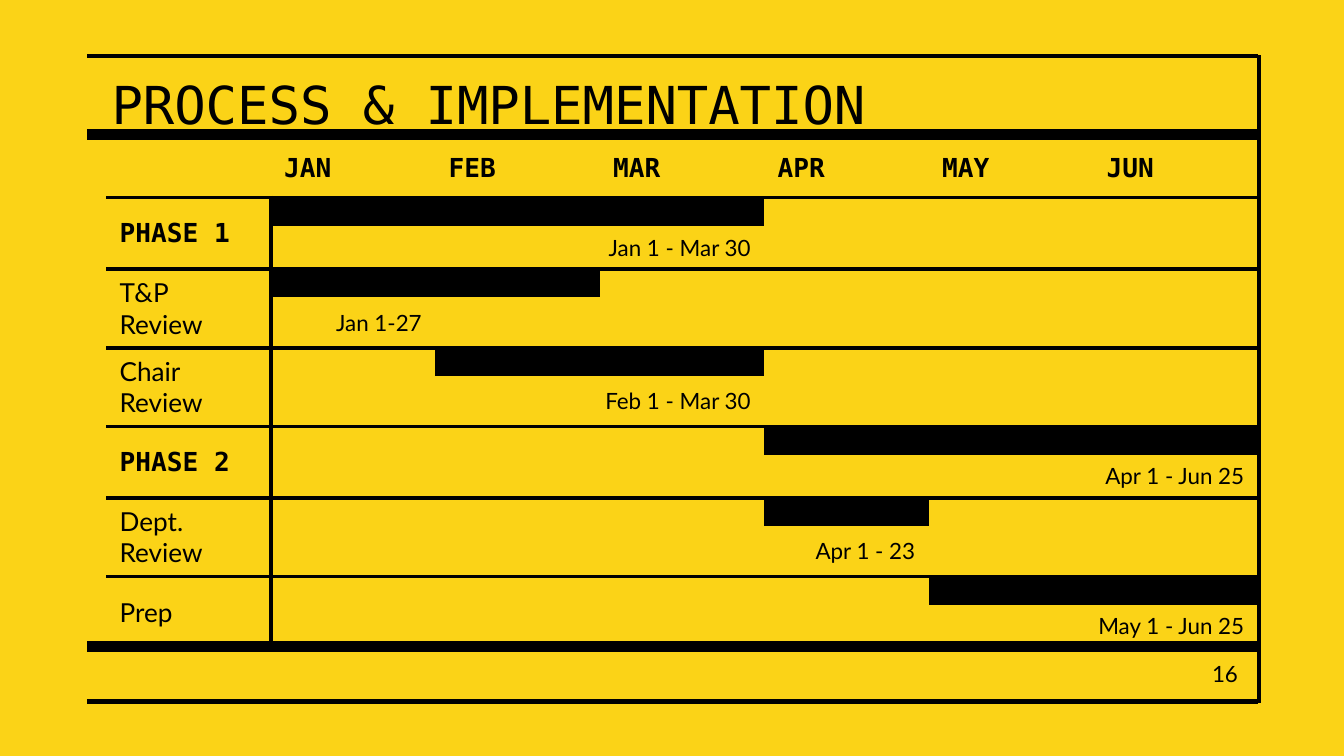
"""Build the process and implementation timeline slide."""
import pptx
from lxml import etree
from pptx import util as u
from pptx.dml import color as c
from pptx.enum import shapes, text
from pptx.oxml import ns

Pt = u.Pt
BLACK = c.RGBColor(0x00, 0x00, 0x00)
YELLOW = c.RGBColor(0xFB, 0xD3, 0x17)
MONO, SANS = "DejaVu Sans Mono", "Lato"
LEFT, RIGHT = text.PP_ALIGN.LEFT, text.PP_ALIGN.RIGHT
HEAD = {"name": MONO, "size": Pt(14), "bold": True}
TASK = {"name": SANS, "size": Pt(14), "bold": False}
DATE = {"name": SANS, "size": Pt(12), "bold": False}

MONTHS = ["JAN", "FEB", "MAR", "APR", "MAY", "JUN"]
PHASES = [
    ("PHASE 1", HEAD, (1, 3), "Jan 1 - Mar 30", (2, 3), 23.1),
    ("T&P Review", TASK, (1, 2), "Jan 1-27", (1, 1), 27.1),
    ("Chair Review", TASK, (2, 3), "Feb 1 - Mar 30", (2, 3), 27.1),
    ("PHASE 2", HEAD, (4, 6), "Apr 1 - Jun 25", (4, 6), 23.1),
    ("Dept. Review", TASK, (4, 4), "Apr 1 - 23", (4, 4), 27.1),
    ("Prep", TASK, (5, 6), "May 1 - Jun 25", (5, 6), 23.1),
]
RULES = [
    (674.6, 29.5, 674.6, 376.6, 2.25),
    (46.8, 375.8, 674, 375.8, 2.25),
    (46.8, 30.2, 674, 30.2, 2.25),
    (46.8, 72, 674.6, 72, 6),
    (46.8, 346.3, 674, 346.3, 6),
]


def assign(thing, values):
    for key, value in values.items():
        setattr(thing, key, value)


class Slide:
    def __init__(self, deck):
        self.ink = BLACK
        self.rule = 2.25
        self.page = deck.slides.add_slide(deck.slide_layouts[6])
        self.page.background.fill.solid()
        self.page.background.fill.fore_color.rgb = YELLOW

    def line(self, x1, y1, x2, y2, width):
        line = self.page.shapes.add_connector(
            shapes.MSO_CONNECTOR.STRAIGHT, Pt(x1), Pt(y1), Pt(x2), Pt(y2))
        line.line.color.rgb = self.ink
        line.line.width = Pt(width)
        etree.SubElement(line._element.spPr, ns.qn("a:effectLst"))

    def words(self, frame, words, font, align=LEFT):
        para = frame.paragraphs[0]
        para.alignment = align
        run = para.add_run()
        run.text = words
        assign(run.font, font)
        run.font.color.rgb = self.ink

    def label(self, box, words, font, align=LEFT, side=7.2, edge=0):
        frame = self.page.shapes.add_textbox(*map(Pt, box)).text_frame
        assign(frame, {
            "word_wrap": True, "vertical_anchor": text.MSO_ANCHOR.MIDDLE,
            "margin_left": Pt(side), "margin_right": Pt(side),
            "margin_top": Pt(edge), "margin_bottom": Pt(edge)})
        self.words(frame, words, font, align)

    def table(self, x, y, wide, heights, count):
        high = sum(heights)
        table = self.page.shapes.add_table(
            len(heights), count, Pt(x), Pt(y), Pt(wide), Pt(high)).table
        assign(table, {"first_row": False, "horz_banding": False})
        for col in table.columns:
            col.width = Pt(wide / count)
        for row, height in zip(table.rows, heights):
            row.height = Pt(height)
        return table

    def border(self, cell, sides):
        props = cell._tc.get_or_add_tcPr()
        for side in "LRTB":
            line = etree.SubElement(props, ns.qn(f"a:ln{side}"))
            if side in sides:
                line.set("w", str(Pt(self.rule)))
                fill = etree.SubElement(line, ns.qn("a:solidFill"))
                etree.SubElement(fill, ns.qn("a:srgbClr")).set("val", str(self.ink))
            else:
                etree.SubElement(line, ns.qn("a:noFill"))

    def blank(self, cell, sides, solid):
        self.border(cell, sides)
        if solid:
            cell.fill.solid()
            cell.fill.fore_color.rgb = self.ink
        else:
            cell.fill.background()
        assign(cell, {"margin_top": 0, "margin_bottom": 0})
        cell.text_frame.paragraphs[0]._p.get_or_add_endParaRPr().set("sz", "600")

    def fill(self, cell, words, font, align=LEFT, edge=4.3):
        assign(cell, {
            "vertical_anchor": text.MSO_ANCHOR.MIDDLE,
            "margin_left": Pt(7.2), "margin_right": Pt(7.2),
            "margin_top": Pt(edge), "margin_bottom": Pt(edge)})
        self.words(cell.text_frame, words, font, align)


def edges(row, col, last):
    if row == 0:
        return "TB"
    sides = "T" if row % 2 else ""
    if row < last - 1 and (row % 2 == 0 or col == 0):
        sides += "B"
    return sides + {0: "R", 1: "L"}.get(col, "")


def gantt(slide):
    heights = [31.7]
    for phase in PHASES:
        heights += [15.1, phase[-1]]
    count = len(MONTHS) + 1
    table = slide.table(56.9, 74.2, 617.1, heights, count)
    last = len(heights) - 1
    for row in range(last + 1):
        for col in range(count):
            start, end = PHASES[(row - 1) // 2][2]
            solid = row % 2 == 1 and start <= col <= end
            slide.blank(table.cell(row, col), edges(row, col, last), solid)
    for col, month in enumerate(MONTHS, 1):
        slide.fill(table.cell(0, col), month, HEAD, edge=7.2)
    for i, (name, font, _, date, (start, end), _) in enumerate(PHASES):
        top = 2 * i + 1
        task, when = table.cell(top, 0), table.cell(top + 1, start)
        task.merge(table.cell(top + 1, 0))
        if end > start:
            when.merge(table.cell(top + 1, end))
        slide.fill(task, name, font)
        slide.fill(when, date, DATE, RIGHT, 1.4 if top + 1 == last else 4.3)


def main():
    deck = pptx.Presentation()
    assign(deck, {"slide_width": Pt(720), "slide_height": Pt(405)})
    slide = Slide(deck)
    for rule in RULES:
        slide.line(*rule)
    slide.label((56.9, 36.7, 607, 37.4), "PROCESS & IMPLEMENTATION",
                {"name": MONO, "size": Pt(28)}, side=2.9)
    slide.label((627.1, 354.2, 43.2, 13.7), "16", DATE, RIGHT, edge=7.2)
    gantt(slide)
    deck.save("out.pptx")


if __name__ == "__main__":
    main()
